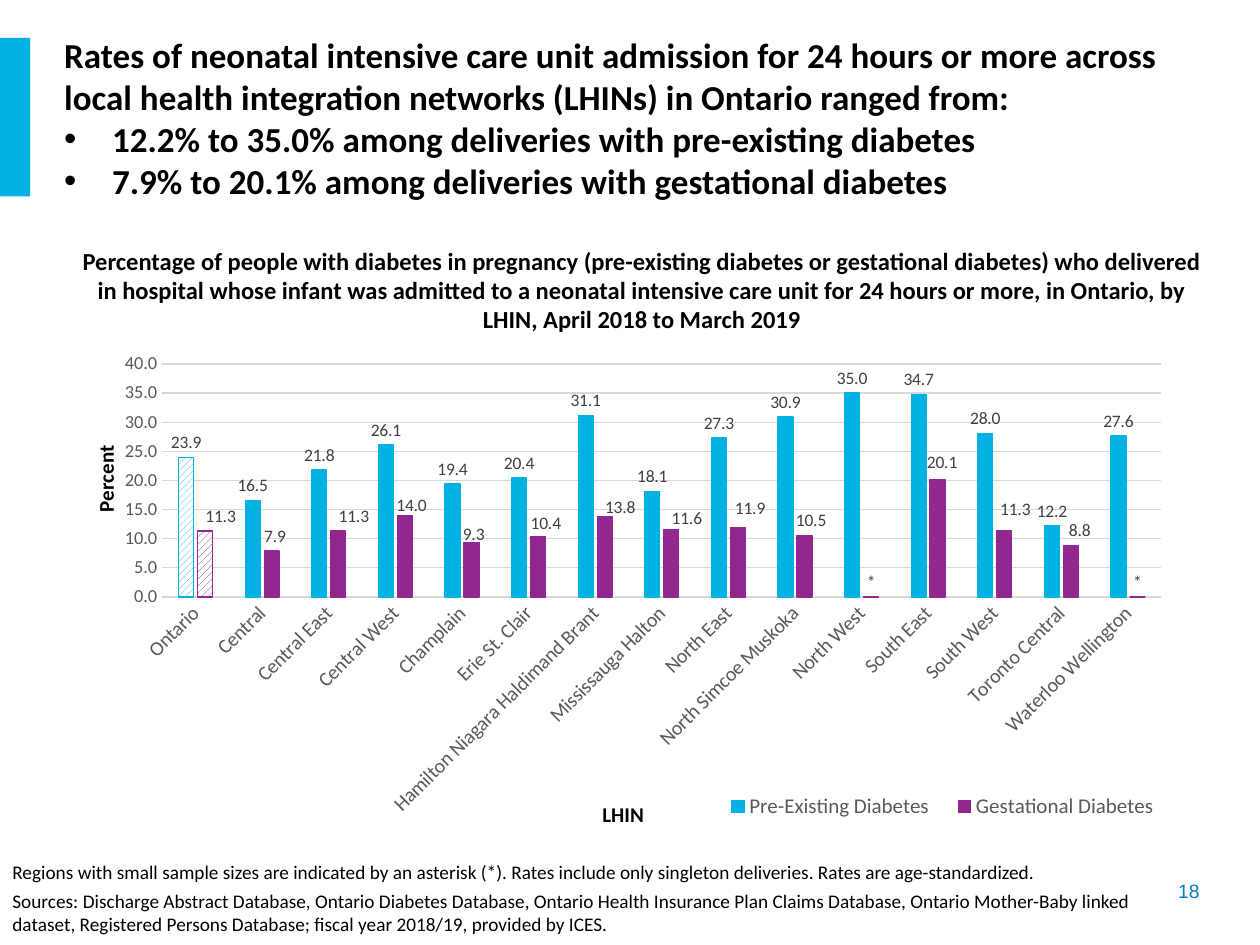
"""Build the slide on neonatal intensive care admission rates by LHIN."""
from lxml import etree
from pptx import Presentation
from pptx.chart.data import CategoryChartData
from pptx.dml.color import RGBColor
from pptx.enum import chart as ch, dml, shapes, text
from pptx.oxml.ns import qn
from pptx.util import Inches, Pt


def style(font, size, color, bold=False, name="Calibri"):
    """Set size, colour, weight and face of a font."""
    font.size, font.bold, font.name = Pt(size), bold, name
    font.color.rgb = RGBColor.from_string(color)


def arrange(parent, index, **settings):
    """Give a chart part a manual layout."""
    for old in parent.findall(qn("c:layout")):
        parent.remove(old)
    layout = etree.Element(qn("c:layout"))
    manual = etree.SubElement(layout, qn("c:manualLayout"))
    for tag, value in settings.items():
        etree.SubElement(manual, qn(f"c:{tag}"), val=str(value))
    parent.insert(index, layout)


BLUE, PURPLE, GREY, PALE = "00B2E3", "92278F", "595959", "D9D9D9"

prs = Presentation()
prs.slide_width, prs.slide_height = Inches(10), Inches(7.5)
slide = prs.slides.add_slide(prs.slide_layouts[5])

accent = slide.shapes.add_shape(shapes.MSO_SHAPE.RECTANGLE, 0, Inches(0.3), Inches(0.24), Inches(1.26))
accent.shadow.inherit = False
accent.fill.solid()
accent.fill.fore_color.rgb = RGBColor.from_string(BLUE)
accent.line.fill.background()

headline = slide.shapes.title
headline.left, headline.top, headline.width, headline.height = map(Inches, (0.41, 0.21, 9.4, 1.45))
headline.text_frame.text = "\n".join([
    "Rates of neonatal intensive care unit admission for 24 hours or more across "
    "local health integration networks (LHINs) in Ontario ranged from:",
    "12.2% to 35.0% among deliveries with pre-existing diabetes",
    "7.9% to 20.1% among deliveries with gestational diabetes",
])
headline.text_frame.auto_size = text.MSO_AUTO_SIZE.NONE
headline.text_frame.vertical_anchor = text.MSO_ANCHOR.MIDDLE
for number, paragraph in enumerate(headline.text_frame.paragraphs):
    paragraph.alignment = text.PP_ALIGN.LEFT
    paragraph.space_before = Pt(0)
    style(paragraph.font, 20, "000000", True)
    if number:
        props = paragraph._p.get_or_add_pPr()
        props.set("marL", str(Inches(0.38)))
        props.set("indent", str(Inches(-0.38)))
        bullet_font = etree.Element(qn("a:buFont"), typeface="Arial")
        bullet = etree.Element(qn("a:buChar"), char="•")
        props.find(qn("a:defRPr")).addprevious(bullet_font)
        bullet_font.addnext(bullet)

passages = [
    ((0.46, 1.9, 9.27, 0.81), 14, "000000", True, "Calibri", text.PP_ALIGN.CENTER, 0, [
        "Percentage of people with diabetes in pregnancy (pre-existing diabetes or gestational "
        "diabetes) who delivered in hospital whose infant was admitted to a neonatal intensive "
        "care unit for 24 hours or more, in Ontario, by LHIN, April 2018 to March 2019"]),
    ((0, 6.78, 9.4, 0.71), 11, "000000", False, "Calibri", text.PP_ALIGN.LEFT, 3.3, [
        "Regions with small sample sizes are indicated by an asterisk (*). Rates include only "
        "singleton deliveries. Rates are age-standardized.",
        "Sources: Discharge Abstract Database, Ontario Diabetes Database, Ontario Health Insurance "
        "Plan Claims Database, Ontario Mother-Baby linked dataset, Registered Persons Database; "
        "fiscal year 2018/19, provided by ICES."]),
    ((8.45, 6.93, 1.17, 0.29), 11, "047BC1", False, "Arial", text.PP_ALIGN.RIGHT, 0, ["18"]),
]
for box, size, color, bold, face, alignment, gap, lines in passages:
    frame = slide.shapes.add_textbox(*map(Inches, box)).text_frame
    frame.word_wrap = True
    frame.text = "\n".join(lines)
    for paragraph in frame.paragraphs:
        paragraph.alignment = alignment
        paragraph.space_before = Pt(gap)
        style(paragraph.font, size, color, bold, face)

rates = CategoryChartData(number_format="0.0")
rates.categories = [
    "Ontario", "Central", "Central East", "Central West", "Champlain", "Erie St. Clair",
    "Hamilton Niagara Haldimand Brant", "Mississauga Halton", "North East", "North Simcoe Muskoka",
    "North West", "South East", "South West", "Toronto Central", "Waterloo Wellington"]
gestational = [11.3, 7.9, 11.3, 14, 9.3, 10.4, 13.8, 11.6, 11.9, 10.5, 0, 20.1, 11.3, 8.8, 0]
rates.add_series("Pre-Existing Diabetes", [
    23.9, 16.5, 21.8, 26.1, 19.4, 20.4, 31.1, 18.1, 27.3, 30.9, 35, 34.7, 28, 12.2, 27.6])
rates.add_series("Gestational Diabetes", gestational)
chart = slide.shapes.add_chart(
    ch.XL_CHART_TYPE.COLUMN_CLUSTERED, *map(Inches, (0.61, 2.71, 8.81, 3.97)), rates).chart
style(chart.font, 10, "000000")
chart.has_title = False
chart.has_legend = True
chart.legend.position = ch.XL_LEGEND_POSITION.BOTTOM
chart.legend.include_in_layout = False
style(chart.legend.font, 12, GREY)
arrange(chart.legend._element, 1, xMode="edge", yMode="edge", x=0.57, y=0.9, w=0.42, h=0.06)

columns = chart.plots[0]
columns.vary_by_categories = False
columns.gap_width, columns.overlap = 219, -27
arrange(chart._chartSpace.chart.plotArea, 0, layoutTarget="inner", xMode="edge", yMode="edge",
        x=0.077, y=0.045, w=0.9, h=0.466)

regions, percent = chart.category_axis, chart.value_axis
for axis, name, size, turn, title_turn, x, y in [
        (regions, "LHIN", 11.5, -45, 0, 0.47, 0.91), (percent, "Percent", 10.5, 0, -90, 0.01, 0.2)]:
    axis.major_tick_mark = axis.minor_tick_mark = ch.XL_TICK_MARK.NONE
    style(axis.tick_labels.font, size, GREY)
    axis._element.find(qn("c:txPr")).find(qn("a:bodyPr")).set("rot", str(turn * 60000))
    title = axis.axis_title
    title.text_frame.text = name
    style(title.text_frame.paragraphs[0].runs[0].font, 12, "000000", True)
    title.text_frame._txBody.find(qn("a:bodyPr")).set("rot", str(title_turn * 60000))
    arrange(title._element, 1, xMode="edge", yMode="edge", x=x, y=y)
regions.format.line.color.rgb = RGBColor.from_string(PALE)
regions.format.line.width = Pt(0.75)
percent.minimum_scale, percent.maximum_scale, percent.major_unit = 0, 40, 5
percent.tick_labels.number_format = "0.0"
percent.tick_labels.number_format_is_linked = False
percent.format.line.fill.background()
percent.major_gridlines.format.line.color.rgb = RGBColor.from_string(PALE)
percent.major_gridlines.format.line.width = Pt(0.75)

for series, color in zip(columns.series, (BLUE, PURPLE)):
    ink = RGBColor.from_string(color)
    province = series.points[0].format
    series.format.fill.solid()
    series.format.fill.fore_color.rgb = ink
    province.fill.patterned()
    province.fill.pattern = dml.MSO_PATTERN.WIDE_UPWARD_DIAGONAL
    province.fill.fore_color.rgb = ink
    province.fill.back_color.rgb = RGBColor.from_string("FFFFFF")
    for outline in (series.format.line, province.line):
        outline.color.rgb = ink
        outline.width = Pt(0.75)
    labels = series.data_labels
    labels.show_value = True
    labels.number_format, labels.number_format_is_linked = "0.0", False
    labels.position = ch.XL_LABEL_POSITION.OUTSIDE_END
    style(labels.font, 10, "404040")

nudges = [(0.014, 0), (0.003, 0), (0.014, 0), (0.006, 0.01), (0.002, 0.014), (0.007, 0.004),
          (0.014, 0.012), (0.014, 0.008), (0.011, -0.008), (0.006, 0), (0, 0),
          (0.004, -0.006), (0.01, -0.014), (0.008, 0), (0, 0)]
purple_bars = columns.series[1]
for number, (rate, (x, y)) in enumerate(zip(gestational, nudges)):
    label = purple_bars.points[number].data_label
    if rate:
        style(label.font, 10, "404040")
    else:
        label.text_frame.text = "*"
        style(label.text_frame.paragraphs[0].runs[0].font, 10, "404040")
    label.position = ch.XL_LABEL_POSITION.OUTSIDE_END
for entry, (x, y) in zip(purple_bars.data_labels._element.findall(qn("c:dLbl")), nudges):
    arrange(entry, 1, x=x, y=y)

prs.save("out.pptx")
